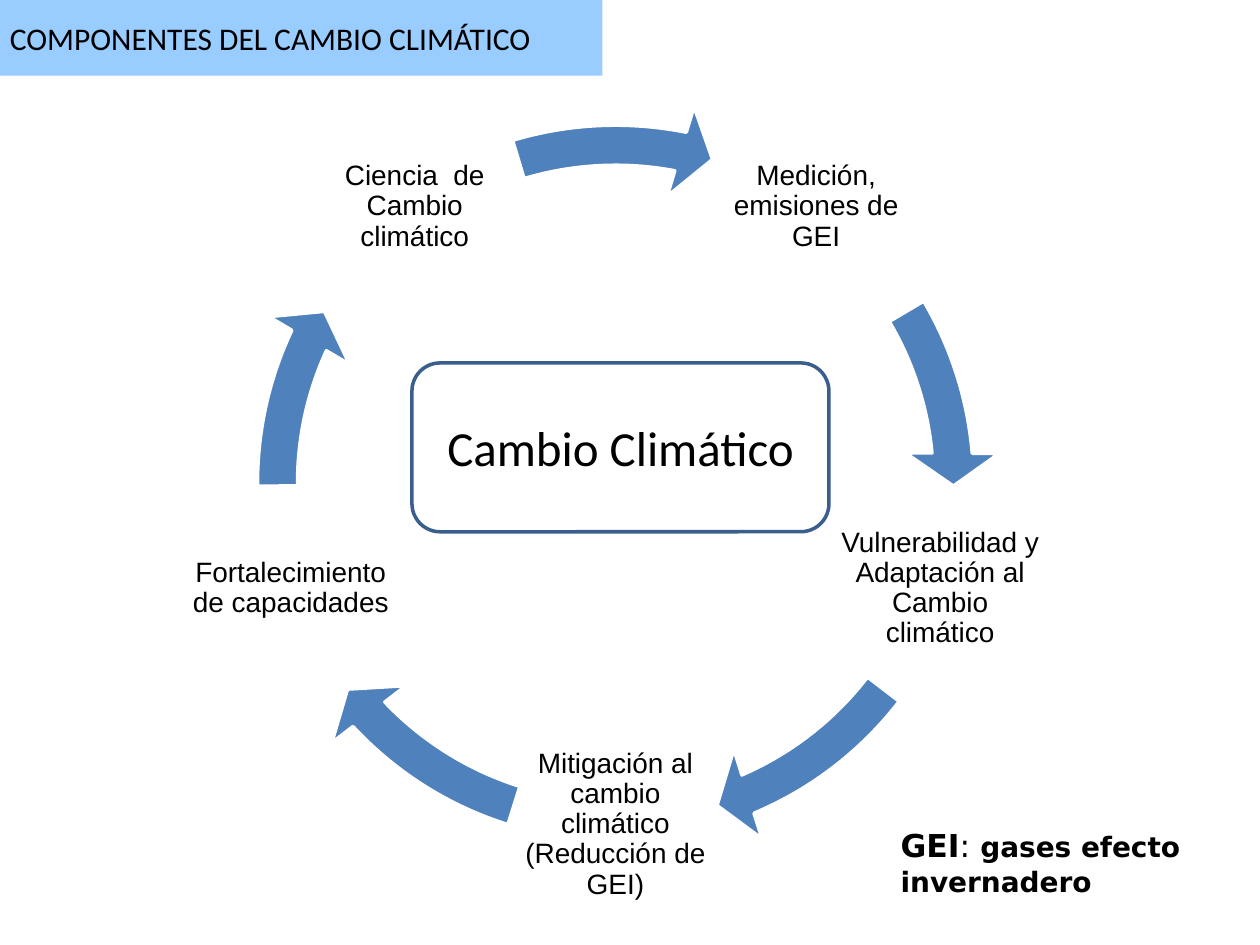
"""Build the slide on the components of climate change as a five-step cycle."""
import math
from dataclasses import dataclass

from pptx import Presentation
from pptx import util as u
from pptx.dml.color import RGBColor
from pptx.enum import shapes, text

CENTER_X, CENTER_Y = 351.7, 276.1
RADIUS, LABEL_SIZE, RING_SIZE = 195.1, 117.4, 439.9
FIRST_ANGLE = -54


@dataclass(frozen=True)
class Step:
    label: str
    arrow_end: float
    arrow_start: float


STEPS = [
    Step("Medición, emisiones de GEI", 212.94, 197.66),
    Step("Vulnerabilidad y Adaptación al Cambio climático", 40.15, 22.53),
    Step("Mitigación al cambio climático (Reducción de GEI)", 82.11, 64.49),
    Step("Fortalecimiento de capacidades", 122.98, 107.71),
    Step("Ciencia  de Cambio climático", 168.66, 151.98),
]


def color(value: str) -> RGBColor:
    return RGBColor.from_string(value)


def points(*values: float) -> list:
    return [u.Pt(round(value, 2)) for value in values]


def square(x: float, y: float, size: float) -> list:
    return points(x - size / 2, y - size / 2, size, size)


def apply(target, values: dict) -> None:
    for name, value in values.items():
        setattr(target, name, value)


def write(box, runs: list, frame_format: dict, para_format: dict) -> None:
    apply(box.text_frame, {"word_wrap": True, **frame_format})
    para = box.text_frame.paragraphs[0]
    apply(para, para_format)
    for words, font_format in runs:
        span = para.add_run()
        span.text = words
        apply(span.font, font_format)
        span.font.color.rgb = color("000000")


def add_block(parent, kind, place: list, fill: str = "", line: str = ""):
    block = parent.add_shape(kind, *place)
    block.shadow.inherit = False
    if fill:
        block.fill.solid()
        block.fill.fore_color.rgb = color(fill)
    else:
        block.fill.background()
    if line:
        block.line.color.rgb = color(line)
        block.line.width = u.Pt(2)
    else:
        block.line.fill.background()
    return block


def add_step(cycle, step: Step, angle: float) -> None:
    x = CENTER_X + RADIUS * math.cos(math.radians(angle))
    y = CENTER_Y + RADIUS * math.sin(math.radians(angle))
    label = cycle.add_textbox(*square(x, y, LABEL_SIZE))
    sides = ("left", "top", "right", "bottom")
    margins = {f"margin_{side}": u.Pt(1.6) for side in sides}
    write(label, [(step.label, {"size": u.Pt(16), "name": "Arial"})],
          {"vertical_anchor": text.MSO_ANCHOR.MIDDLE, **margins},
          {"alignment": text.PP_ALIGN.CENTER, "line_spacing": 0.9})
    arrow = add_block(cycle, shapes.MSO_SHAPE.CIRCULAR_ARROW,
                      square(CENTER_X, CENTER_Y, RING_SIZE), "4F81BD", "FFFFFF")
    values = (0.052, 3.358, step.arrow_end, step.arrow_start, 0.061)
    for index, value in enumerate(values):
        arrow.adjustments[index] = value


def main() -> None:
    deck = Presentation()
    deck.slide_width, deck.slide_height = points(720, 540)
    page = deck.slides.add_slide(deck.slide_layouts[6])
    middle = {"vertical_anchor": text.MSO_ANCHOR.MIDDLE}

    header = add_block(page.shapes, shapes.MSO_SHAPE.RECTANGLE,
                       points(-1.4, 0, 345.6, 43.2), "99CCFF")
    write(header, [("COMPONENTES DEL CAMBIO CLIMÁTICO",
                    {"size": u.Pt(18), "name": "Calibri"})],
          middle, {"alignment": text.PP_ALIGN.LEFT})

    cycle = page.shapes.add_group_shape().shapes
    for index, step in enumerate(STEPS):
        add_step(cycle, step, FIRST_ANGLE + index * 360 / len(STEPS))

    hub = add_block(page.shapes, shapes.MSO_SHAPE.ROUNDED_RECTANGLE,
                    points(235.4, 207.4, 238.3, 96.5), line="3A5F8C")
    write(hub, [("Cambio Climático", {"size": u.Pt(28), "name": "Calibri"})],
          middle, {"alignment": text.PP_ALIGN.CENTER})

    note = page.shapes.add_textbox(*points(507.6, 468.7, 187.2, 48.2))
    large = {"size": u.Pt(18), "name": "DejaVu Sans"}
    write(note, [("GEI", {**large, "bold": True}),
                 (": ", {**large, "bold": False}),
                 ("gases efecto invernadero",
                  {**large, "size": u.Pt(16), "bold": True})],
          {"auto_size": text.MSO_AUTO_SIZE.SHAPE_TO_FIT_TEXT}, {})

    deck.save("out.pptx")


if __name__ == "__main__":
    main()
